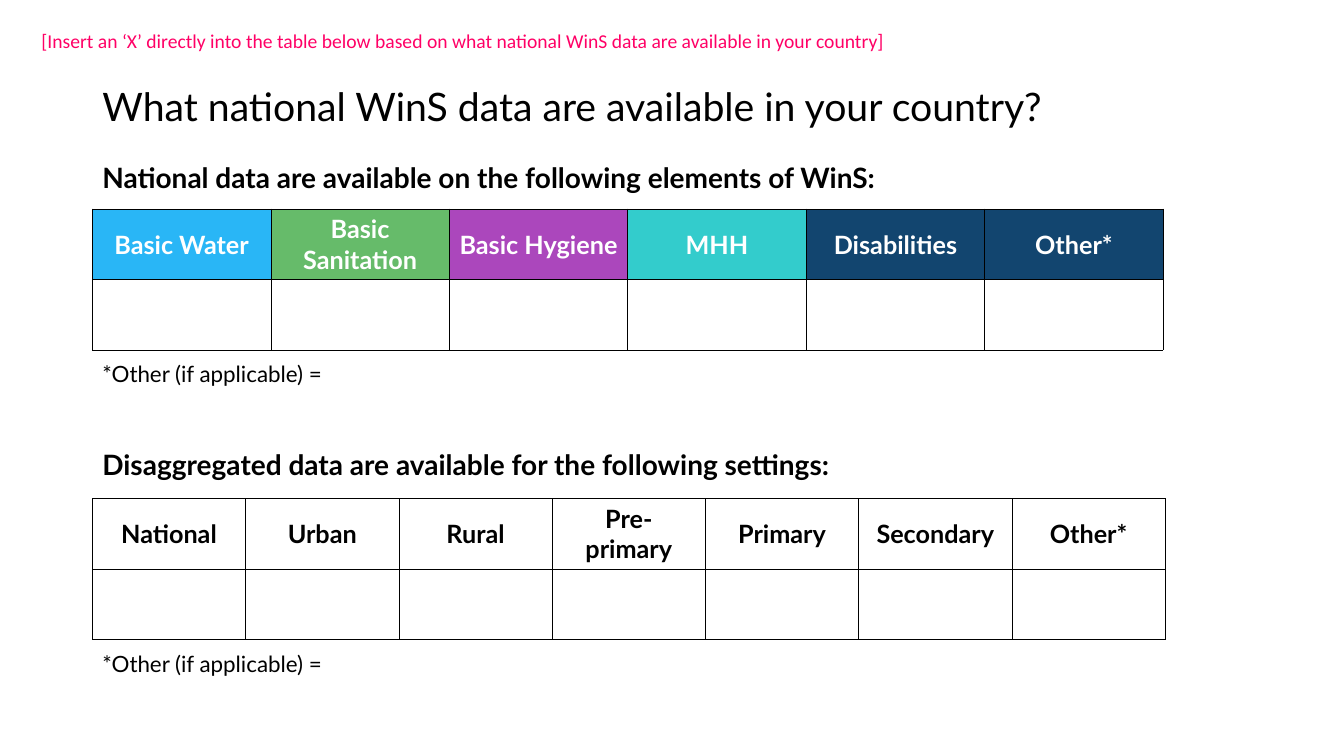
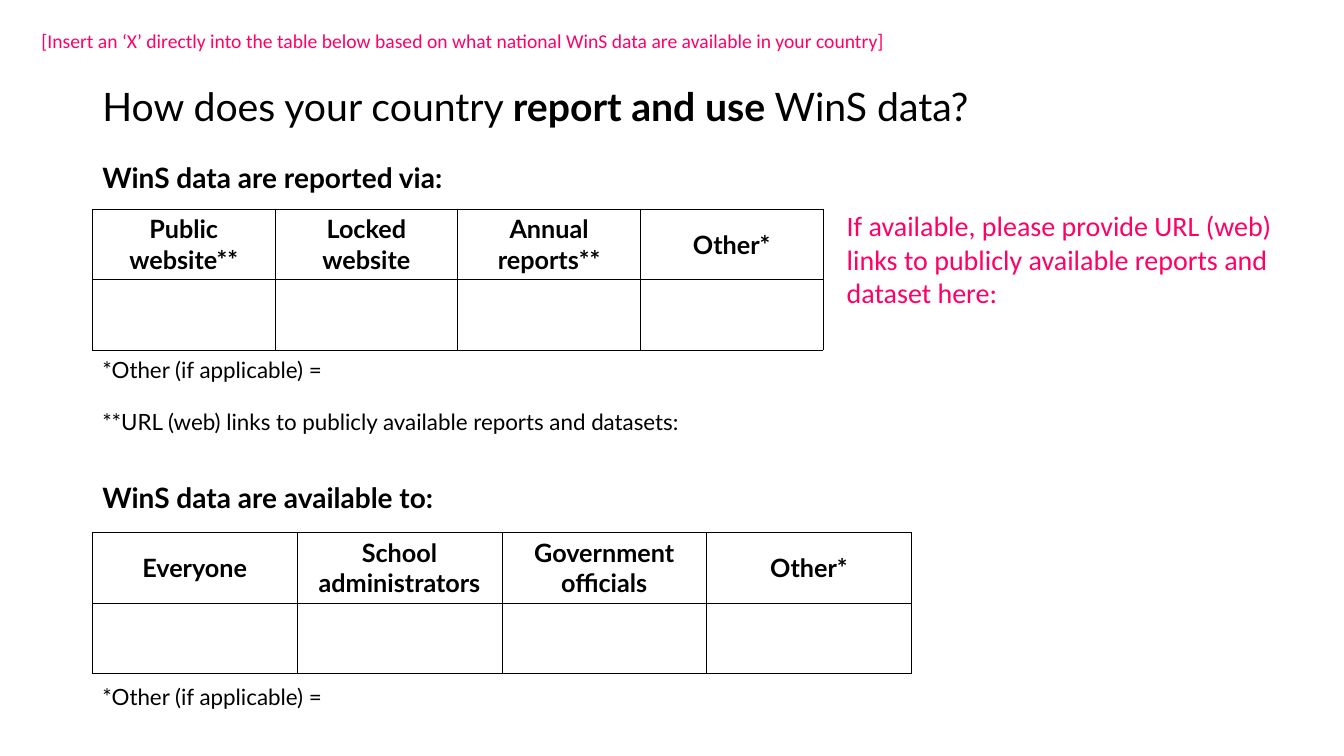
import pptx
import pptx.dml.color
import pptx.enum.text
import pptx.oxml
import pptx.oxml.ns
import pptx.util

PX = 9525  # EMU in one px, for a 1280 x 720 slide
COLORS = {
    "text": "000000", "white": "FFFFFF", "prompt": "FF0066", "border": "000000",
    "water": "29B6F6", "sanitation": "66BB6A", "hygiene": "AB47BC",
    "menstrual": "33CCCC", "navy": "12456F",
}
STYLES = {
    "title": {"name": "Lato", "size": 28, "bold": False, "color": "text"},
    "heading": {"name": "Lato", "size": 20, "bold": True, "color": "text"},
    "header": {"name": "Lato", "size": 18, "bold": True, "color": "text"},
    "header_light": {"name": "Lato", "size": 18, "bold": True, "color": "white"},
    "note": {"name": "Lato", "size": 16, "bold": False, "color": "text"},
    "instruction": {"name": "Calibri", "size": 14, "bold": False, "color": "prompt"},
    "callout": {"name": "Calibri", "size": 20, "bold": False, "color": "prompt"},
}
ALIGN = pptx.enum.text.PP_ALIGN
ANCHOR = pptx.enum.text.MSO_ANCHOR
LEFT, CONTENT_WIDTH = 88, 1104
ROW_HEIGHT = 67
INSTRUCTION = ("[Insert an ‘X’ directly into the table below based on what "
               "national WinS data are available in your country]")
OTHER_NOTE = "*Other (if applicable) ="


def px(*lengths):
    return [pptx.util.Emu(length * PX) for length in lengths]


def rgb(color):
    return pptx.dml.color.RGBColor.from_string(COLORS[color])


def add_run(paragraph, text, style, **changes):
    values = {**STYLES[style], **changes}
    run = paragraph.add_run()
    run.text = text
    run.font.color.rgb = rgb(values.pop("color"))
    values["size"] = pptx.util.Pt(values["size"])
    for attribute, value in values.items():
        setattr(run.font, attribute, value)


def format_frame(frame, anchor):
    settings = {"word_wrap": True, "vertical_anchor": anchor,
                "auto_size": pptx.enum.text.MSO_AUTO_SIZE.NONE}
    for attribute, value in settings.items():
        setattr(frame, attribute, value)


def add_text(slide, box, lines, style, anchor=ANCHOR.MIDDLE):
    frame = slide.shapes.add_textbox(*px(*box)).text_frame
    format_frame(frame, anchor)
    for index, line in enumerate(lines):
        paragraph = frame.add_paragraph() if index else frame.paragraphs[0]
        paragraph.space_after = pptx.util.Pt(18)
        add_run(paragraph, line, style)


def set_borders(cell):
    properties = cell._tc.get_or_add_tcPr()
    for index, side in enumerate(("lnL", "lnR", "lnT", "lnB")):
        properties.insert(index, pptx.oxml.parse_xml(
            f'<a:{side} {pptx.oxml.ns.nsdecls("a")} w="6350"><a:solidFill>'
            f'<a:srgbClr val="{COLORS["border"]}"/></a:solidFill></a:{side}>'))


def add_answer_table(slide, left, top, column_width, headers, fills):
    """Header row above an empty row for the answers."""
    count = len(headers)
    table = slide.shapes.add_table(
        2, count, *px(left, top, column_width * count, 2 * ROW_HEIGHT)).table
    table.first_row = table.horz_banding = False
    for column in table.columns:
        column.width = px(column_width)[0]
    for row in table.rows:
        row.height = px(ROW_HEIGHT)[0]
    for cell in table.iter_cells():
        cell.fill.solid()
        cell.fill.fore_color.rgb = rgb("white")
        set_borders(cell)
    for index, header in enumerate(headers):
        cell = table.cell(0, index)
        cell.vertical_anchor = ANCHOR.MIDDLE
        if fills:
            cell.fill.fore_color.rgb = rgb(fills[index])
        paragraph = cell.text_frame.paragraphs[0]
        paragraph.alignment = ALIGN.CENTER
        add_run(paragraph, header, "header_light" if fills else "header")


def add_section(slide, top, heading, headers, column_width, table_gap=72,
                fills=None, notes=(OTHER_NOTE,)):
    """Heading, answer table and notes, measured from the section top."""
    table_top = top + table_gap
    add_text(slide, (LEFT, top, CONTENT_WIDTH, 78), [heading], "heading")
    add_answer_table(slide, LEFT, table_top, column_width, headers, fills)
    note_height = 51 + 42 * (len(notes) - 1)
    add_text(slide, (LEFT, table_top + 131, CONTENT_WIDTH, note_height), notes, "note")


def add_question_slide(presentation, title_parts):
    """Title and instruction; title parts are pairs of text and bold."""
    slide = presentation.slides.add_slide(presentation.slide_layouts[5])
    title = slide.shapes.title
    title.left, title.top, title.width, title.height = px(LEFT, 62, CONTENT_WIDTH, 78)
    format_frame(title.text_frame, ANCHOR.MIDDLE)
    paragraph = title.text_frame.paragraphs[0]
    paragraph.alignment = ALIGN.LEFT
    for text, bold in title_parts:
        add_run(paragraph, text, "title", bold=bold)
    add_text(slide, (30, 23, 1220, 33), [INSTRUCTION], "instruction", ANCHOR.TOP)
    return slide


def add_availability_slide(presentation):
    slide = add_question_slide(
        presentation, [("What national WinS data are available in your country?", False)])
    add_section(
        slide, 130, "National data are available on the following elements of WinS:",
        ["Basic Water", "Basic Sanitation", "Basic Hygiene", "MHH", "Disabilities", "Other*"],
        170, table_gap=69,
        fills=["water", "sanitation", "hygiene", "menstrual", "navy", "navy"])
    add_section(
        slide, 403, "Disaggregated data are available for the following settings:",
        ["National", "Urban", "Rural", "Pre-primary", "Primary", "Secondary", "Other*"], 146)


def add_reporting_slide(presentation):
    slide = add_question_slide(
        presentation, [("How does your country ", False), ("report and use", True),
                       (" WinS data?", False)])
    add_section(
        slide, 130, "WinS data are reported via:",
        ["Public website**", "Locked website", "Annual reports**", "Other*"],
        174, table_gap=69,
        notes=(OTHER_NOTE, "**URL (web) links to publicly available reports and datasets:"))
    add_section(
        slide, 435, "WinS data are available to:",
        ["Everyone", "School administrators", "Government officials", "Other*"], 195)
    # Request for links beside the first table
    add_text(slide, (797, 194, 433, 107),
             ["If available, please provide URL (web) links to publicly available "
              "reports and dataset here:"], "callout", ANCHOR.TOP)


def main():
    presentation = pptx.Presentation()
    presentation.slide_width, presentation.slide_height = px(1280, 720)
    add_availability_slide(presentation)
    add_reporting_slide(presentation)
    presentation.save("out.pptx")


if __name__ == "__main__":
    main()
